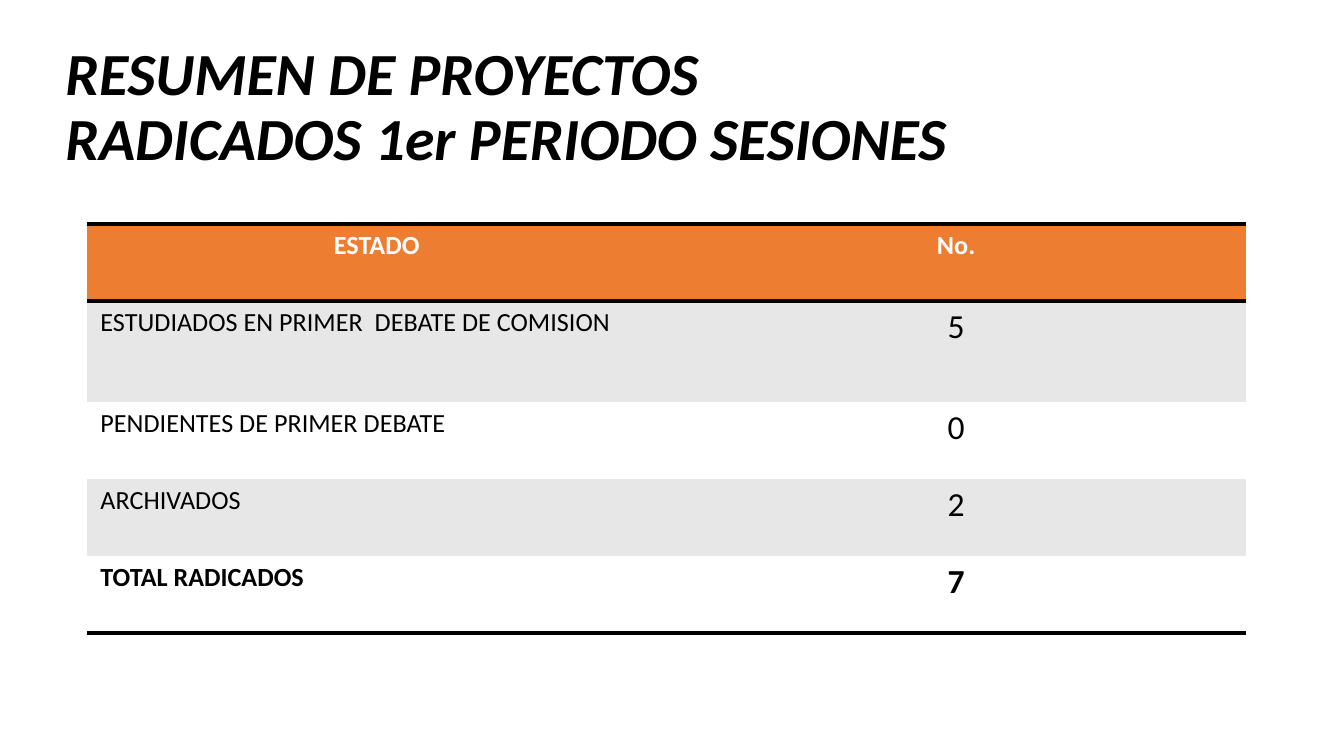
from dataclasses import dataclass

from lxml import etree
from pptx import Presentation
from pptx import util as u
from pptx.dml.color import RGBColor
from pptx.enum import text
from pptx.oxml.ns import qn

PX = 914400 / 134.4


def px(length):
    return u.Emu(round(length * PX))


@dataclass(frozen=True)
class Theme:
    font: str = "Calibri"
    ink: str = "000000"
    paper: str = "FFFFFF"
    accent: str = "ED7D31"
    band: str = "E7E7E7"
    title_size: int = 32
    label_size: int = 14
    count_size: int = 18
    rule_width: int = 2


class Deck:
    def __init__(self, theme, width, height):
        self.theme = theme
        self.presentation = Presentation()
        self.presentation.slide_width = px(width)
        self.presentation.slide_height = px(height)
        self.slide = self.presentation.slides.add_slide(self.presentation.slide_layouts[5])

    def format_text(self, frame, wording, size, color, align, bold=False, italic=False):
        paragraph = frame.paragraphs[0]
        paragraph.alignment = align
        run = paragraph.add_run()
        run.text = wording
        run.font.color.rgb = RGBColor.from_string(color)
        formats = {"name": self.theme.font, "size": u.Pt(size), "bold": bold, "italic": italic}
        for name, value in formats.items():
            setattr(run.font, name, value)
        return paragraph

    def title(self, wording, left, top, width, height):
        heading = self.slide.shapes.title
        place = {"left": left, "top": top, "width": width, "height": height}
        for name, value in place.items():
            setattr(heading, name, px(value))
        frame = heading.text_frame
        frame.word_wrap = True
        frame.auto_size = text.MSO_AUTO_SIZE.NONE
        frame.vertical_anchor = text.MSO_ANCHOR.MIDDLE
        paragraph = self.format_text(frame, wording, self.theme.title_size, self.theme.ink,
                                     text.PP_ALIGN.LEFT, bold=True, italic=True)
        paragraph.line_spacing = 0.9

    def borders(self, cell, ruled_sides):
        properties = cell._tc.get_or_add_tcPr()
        for position, side in enumerate("LRTB"):
            line = etree.Element(qn(f"a:ln{side}"))
            if side in ruled_sides:
                line.set("w", str(u.Pt(self.theme.rule_width)))
                fill = etree.SubElement(line, qn("a:solidFill"))
                etree.SubElement(fill, qn("a:srgbClr"), val=self.theme.ink)
            else:
                line.set("w", "0")
                etree.SubElement(line, qn("a:noFill"))
            properties.insert(position, line)

    def table(self, rows, left, top, column_width, row_heights):
        theme = self.theme
        columns = len(rows[0])
        grid = self.slide.shapes.add_table(
            len(rows), columns, px(left), px(top),
            px(column_width * columns), px(sum(row_heights))).table
        for column in grid.columns:
            column.width = px(column_width)
        ruled_edges = {0, 1, len(rows)}
        for r, (values, height) in enumerate(zip(rows, row_heights)):
            grid.rows[r].height = px(height)
            header, total = r == 0, r == len(rows) - 1
            background = theme.accent if header else theme.band if r % 2 else theme.paper
            ruled_sides = {side for side, edge in (("T", r), ("B", r + 1)) if edge in ruled_edges}
            for c, value in enumerate(values):
                cell = grid.cell(r, c)
                cell.margin_top = cell.margin_bottom = px(6)
                cell.fill.solid()
                cell.fill.fore_color.rgb = RGBColor.from_string(background)
                self.borders(cell, ruled_sides)
                is_count = c > 0 and not header
                self.format_text(
                    cell.text_frame, value,
                    theme.count_size if is_count else theme.label_size,
                    theme.paper if header else theme.ink,
                    text.PP_ALIGN.CENTER if header or is_count else text.PP_ALIGN.LEFT,
                    bold=header or total)

    def save(self):
        self.presentation.save("out.pptx")


def main():
    deck = Deck(Theme(), 1344, 756)
    deck.title("RESUMEN DE PROYECTOS RADICADOS 1er PERIODO SESIONES", 52, 35, 965, 147)
    projects_by_status = [
        ("ESTADO", "No."),
        ("ESTUDIADOS EN PRIMER  DEBATE DE COMISION", "5"),
        ("PENDIENTES DE PRIMER DEBATE", "0"),
        ("ARCHIVADOS", "2"),
        ("TOTAL RADICADOS", "7"),
    ]
    deck.table(projects_by_status, 87, 224, 579.5, [77, 101, 77, 77, 77])
    deck.save()


if __name__ == "__main__":
    main()
